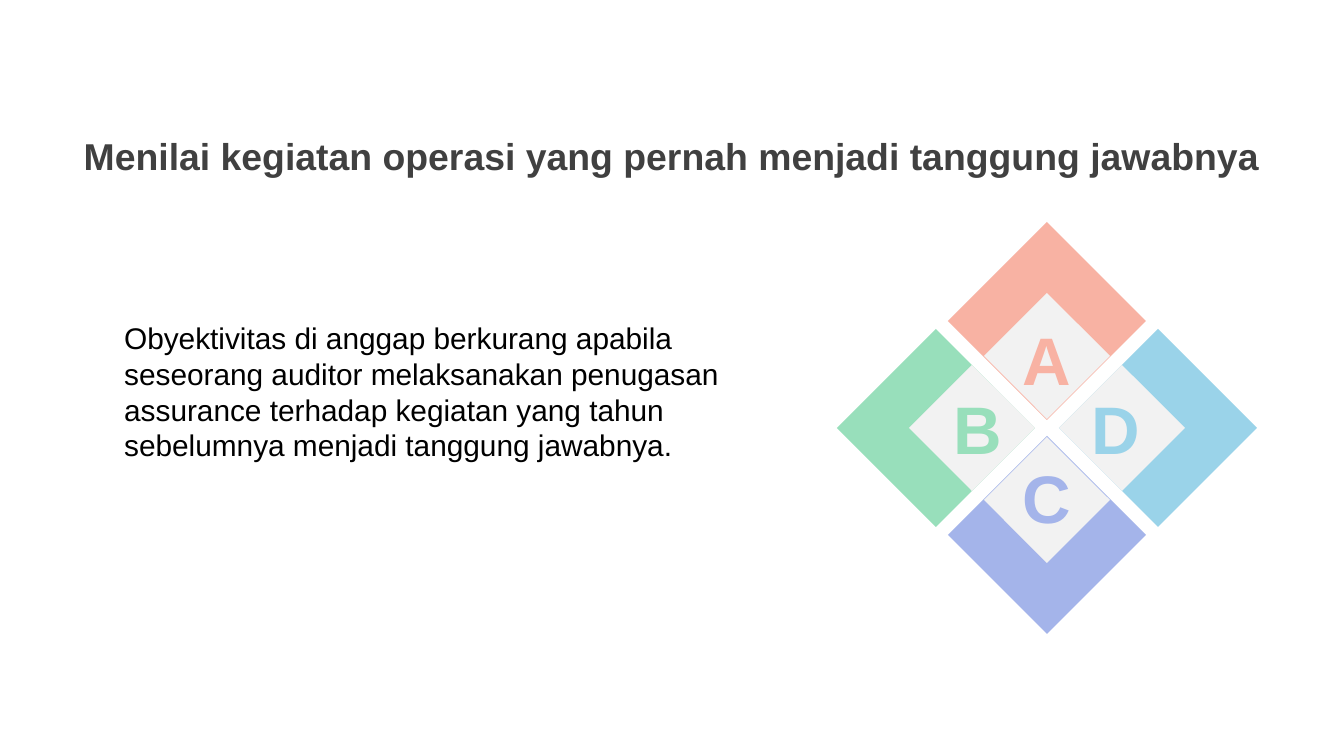
from pptx import Presentation
from pptx.dml.color import RGBColor
from pptx.enum.shapes import MSO_SHAPE
from pptx.enum.text import MSO_ANCHOR, MSO_AUTO_SIZE, PP_ALIGN
from pptx.util import Pt

PX = 914400 / 134.4
FONT = "Arial"
COLORS = {
    "title": "404040",
    "body": "000000",
    "inner": "F2F2F2",
    "A": "F8B2A3",
    "B": "98DFBB",
    "C": "A4B4EA",
    "D": "9AD3E9",
}
DIRECTIONS = {"A": (0, -1), "C": (0, 1), "B": (-1, 0), "D": (1, 0)}
CENTER = (1047, 428)
OUTER, INNER = 198, 126
LETTER_W, LETTER_H = 82, 95


def emu(px):
    return round(px * PX)


def color(name):
    return RGBColor.from_string(COLORS[name])


def around(key, dx, dy):
    x, y = DIRECTIONS[key]
    return CENTER[0] + x * dx, CENTER[1] + y * dy


class SlideBuilder:
    def __init__(self, prs):
        self.s = prs.slides.add_slide(prs.slide_layouts[5])

    def set_text(self, sp, text, size, fill, bold, align, anchor):
        tf = sp.text_frame
        tf.word_wrap = True
        tf.auto_size = MSO_AUTO_SIZE.NONE
        tf.vertical_anchor = anchor
        tf.text = text
        p = tf.paragraphs[0]
        p.alignment = align
        font = p.runs[0].font
        font.name = FONT
        font.size = Pt(size)
        font.bold = bold
        font.color.rgb = color(fill)

    def title(self, text, x, y, w, h):
        sp = self.s.shapes.title
        sp.left, sp.top, sp.width, sp.height = map(emu, (x, y, w, h))
        self.set_text(sp, text, 20, "title", True, PP_ALIGN.CENTER, MSO_ANCHOR.MIDDLE)

    def diamond(self, cx, cy, size, fill):
        box = map(emu, (cx - size / 2, cy - size / 2, size, size))
        sp = self.s.shapes.add_shape(MSO_SHAPE.DIAMOND, *box)
        sp.shadow.inherit = False
        sp.fill.solid()
        sp.fill.fore_color.rgb = color(fill)
        sp.line.fill.background()

    def text(self, text, x, y, w, h, size, fill, bold=False, align=PP_ALIGN.LEFT):
        sp = self.s.shapes.add_textbox(*map(emu, (x, y, w, h)))
        self.set_text(sp, text, size, fill, bold, align, MSO_ANCHOR.TOP)

    def letter(self, key, cx, cy):
        self.text(key, cx - LETTER_W / 2, cy - LETTER_H / 2, LETTER_W, LETTER_H,
                  36, key, True, PP_ALIGN.CENTER)


def main():
    prs = Presentation()
    prs.slide_width, prs.slide_height = emu(1344), emu(756)
    slide = SlideBuilder(prs)
    slide.title("Menilai kegiatan operasi yang pernah menjadi tanggung jawabnya",
                0, 113, 1344, 85)
    for key in DIRECTIONS:
        slide.diamond(*around(key, 111, 107), OUTER, key)
    for key in DIRECTIONS:
        slide.diamond(*around(key, 75, 72), INNER, "inner")
    slide.text("Obyektivitas di anggap berkurang apabila seseorang auditor "
               "melaksanakan penugasan assurance terhadap kegiatan yang tahun "
               "sebelumnya menjadi tanggung jawabnya.",
               111, 313, 688, 159, 16, "body")
    for key in DIRECTIONS:
        slide.letter(key, *around(key, 69, 69))
    prs.save("out.pptx")


if __name__ == "__main__":
    main()
